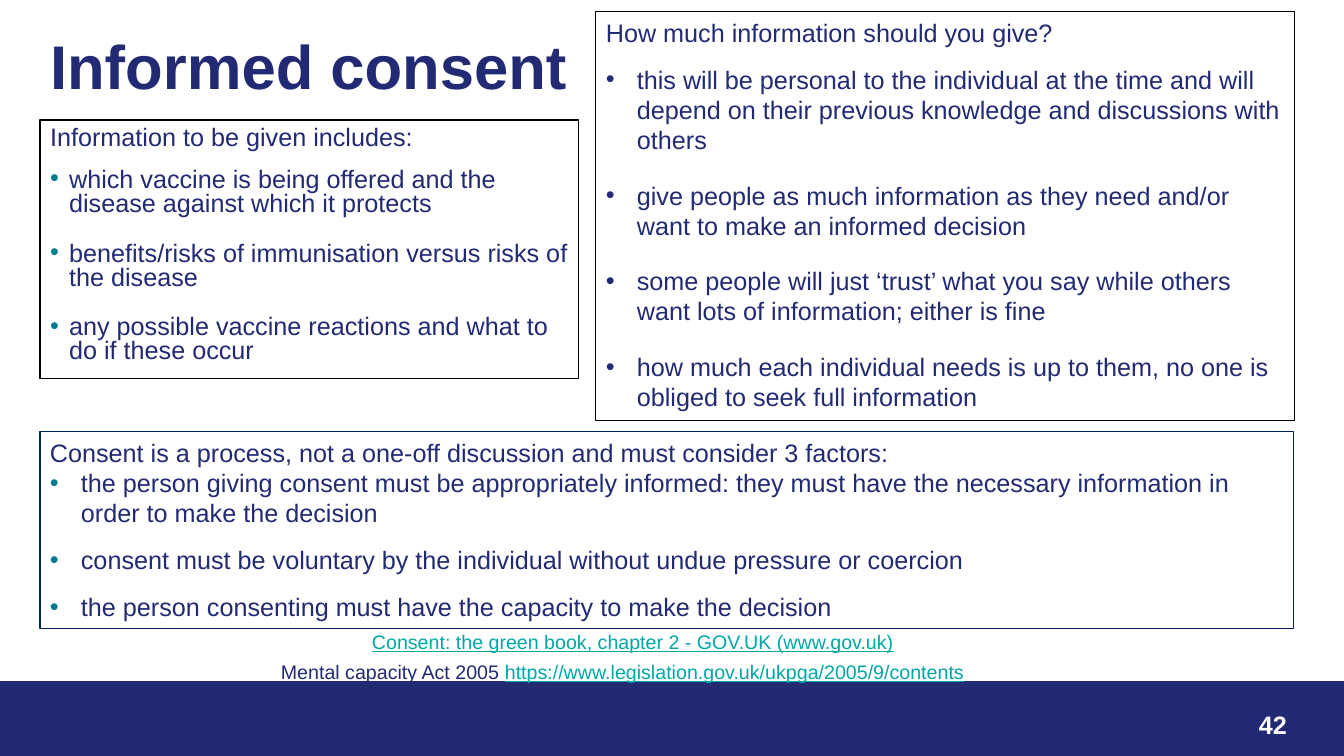
from dataclasses import dataclass

from lxml.etree import SubElement
from pptx import Presentation
from pptx.dml.color import RGBColor
from pptx.enum.shapes import MSO_SHAPE
from pptx.enum.text import MSO_ANCHOR, MSO_AUTO_SIZE
from pptx.oxml.ns import qn
from pptx.util import Emu, Pt


@dataclass(frozen=True)
class Theme:
    font: str = "Arial"
    navy: str = "212A73"
    edge: str = "002060"
    teal: str = "007C91"
    link: str = "00A7A7"
    black: str = "000000"
    white: str = "FFFFFF"
    head: int = 44
    body: int = 18
    small: int = 14


THEME = Theme()
SCALE = 914400 / 100.8


def px(n):
    return Emu(round(n * SCALE))


def put(item, **values):
    for name, value in values.items():
        setattr(item, name, value)


def place(shape, box):
    left, top, width, height = map(px, box)
    put(shape, left=left, top=top, width=width, height=height)


def outline(shape, color, width=0.75):
    shape.line.color.rgb = RGBColor.from_string(color)
    shape.line.width = Pt(width)


def write(para, text, color=THEME.navy, size=THEME.body, **style):
    run = para.add_run()
    run.text = text
    put(run.font, name=THEME.font, size=Pt(size), **style)
    run.font.color.rgb = RGBColor.from_string(color)


def bullet(para, color, indent):
    props = para._p.get_or_add_pPr()
    props.set("marL", str(px(indent)))
    props.set("indent", str(-px(indent)))
    if not indent:
        SubElement(props, qn("a:buNone"))
        return
    tint = SubElement(props, qn("a:buClr"))
    SubElement(tint, qn("a:srgbClr")).set("val", color)
    SubElement(props, qn("a:buFont")).set("typeface", THEME.font)
    SubElement(props, qn("a:buChar")).set("char", "•")


def frame(shape, anchor=MSO_ANCHOR.TOP):
    text = shape.text_frame
    put(text, word_wrap=True, auto_size=MSO_AUTO_SIZE.NONE,
        vertical_anchor=anchor)
    return text


# A lead line followed by bulleted points
def points(shape, box, lead, items, edge, dot, indent, first, rest, top):
    place(shape, box)
    outline(shape, edge)
    text = frame(shape)
    para = text.paragraphs[0]
    put(para, **top)
    bullet(para, dot, 0)
    write(para, lead)
    for i, item in enumerate(items):
        para = text.add_paragraph()
        put(para, **(rest if i else first))
        bullet(para, dot, indent)
        write(para, item)


# One line of text made of styled parts
def label(slide, box, *parts):
    shape = slide.shapes.add_textbox(*map(px, box))
    para = frame(shape).paragraphs[0]
    for text, style in parts:
        write(para, text, **style)


# Page title
def title(shape, box, text):
    place(shape, box)
    para = frame(shape, MSO_ANCHOR.MIDDLE).paragraphs[0]
    put(para, alignment=1, line_spacing=0.9)
    write(para, text, size=THEME.head, bold=True)


# Band with the page number
def footer(slide, box, page):
    left, top, width, height = box
    band = slide.shapes.add_shape(MSO_SHAPE.RECTANGLE, *map(px, box))
    band.shadow.inherit = False
    band.fill.solid()
    band.fill.fore_color.rgb = RGBColor.from_string(THEME.navy)
    outline(band, THEME.navy, 1)
    label(slide, (left + width - 95, top + 22, 95, 40),
          (page, dict(color=THEME.white, bold=True)))


# Sources above the band
def sources(slide, box):
    left, top, width, height = box
    link = dict(color=THEME.link, size=THEME.small, underline=True)
    label(slide, (left + 91, top, 690, 34),
          ("Consent: the green book, chapter 2 - GOV.UK (www.gov.uk)", link))
    label(slide, (left, top + 30, width, height - 30),
          ("Mental capacity Act 2005 ", dict(size=THEME.small)),
          ("https://www.legislation.gov.uk/ukpga/2005/9/contents", link))


def build(deck):
    slide = deck.slides.add_slide(deck.slide_layouts[1])
    footer(slide, (0, 682, 1344, 74), "42")
    title(slide.shapes.title, (40, 29, 1159, 81), "Informed consent")

    none = dict(space_before=Pt(0), space_after=Pt(0))
    gap = dict(space_before=Pt(12), space_after=Pt(0))
    wide = dict(space_before=Pt(12), space_after=Pt(6))
    tight = dict(wide, line_spacing=0.8)

    # What to tell
    points(slide.placeholders[1], (40, 120, 539, 259),
           "Information to be given includes:",
           ["which vaccine is being offered and the disease against which it protects ",
            "benefits/risks of immunisation versus risks of the disease",
            "any possible vaccine reactions and what to do if these occur"],
           THEME.black, THEME.teal, 19, tight, tight,
           dict(space_before=Pt(10), line_spacing=0.9))

    # How much to tell
    points(slide.shapes.add_textbox(0, 0, 0, 0), (596, 12, 699, 409),
           "How much information should you give?",
           ["this will be personal to the individual at the time and will depend on their previous knowledge and discussions with others",
            "give people as much information as they need and/or want to make an informed decision",
            "some people will just ‘trust’ what you say while others want lots of information; either is fine",
            "how much each individual needs is up to them, no one is obliged to seek full information"],
           THEME.black, THEME.navy, 31, wide, wide, none)

    # Three factors
    points(slide.shapes.add_textbox(0, 0, 0, 0), (40, 432, 1254, 197),
           "Consent is a process, not a one-off discussion and must consider 3 factors:",
           ["the person giving consent must be appropriately informed: they must have the necessary information in order to make the decision",
            "consent must be voluntary by the individual without undue pressure or coercion",
            "the person consenting must have the capacity to make the decision"],
           THEME.edge, THEME.teal, 31, none, gap, none)

    sources(slide, (271, 625, 1073, 112))


def main():
    deck = Presentation()
    put(deck, slide_width=px(1344), slide_height=px(756))
    build(deck)
    deck.save("out.pptx")


if __name__ == "__main__":
    main()
